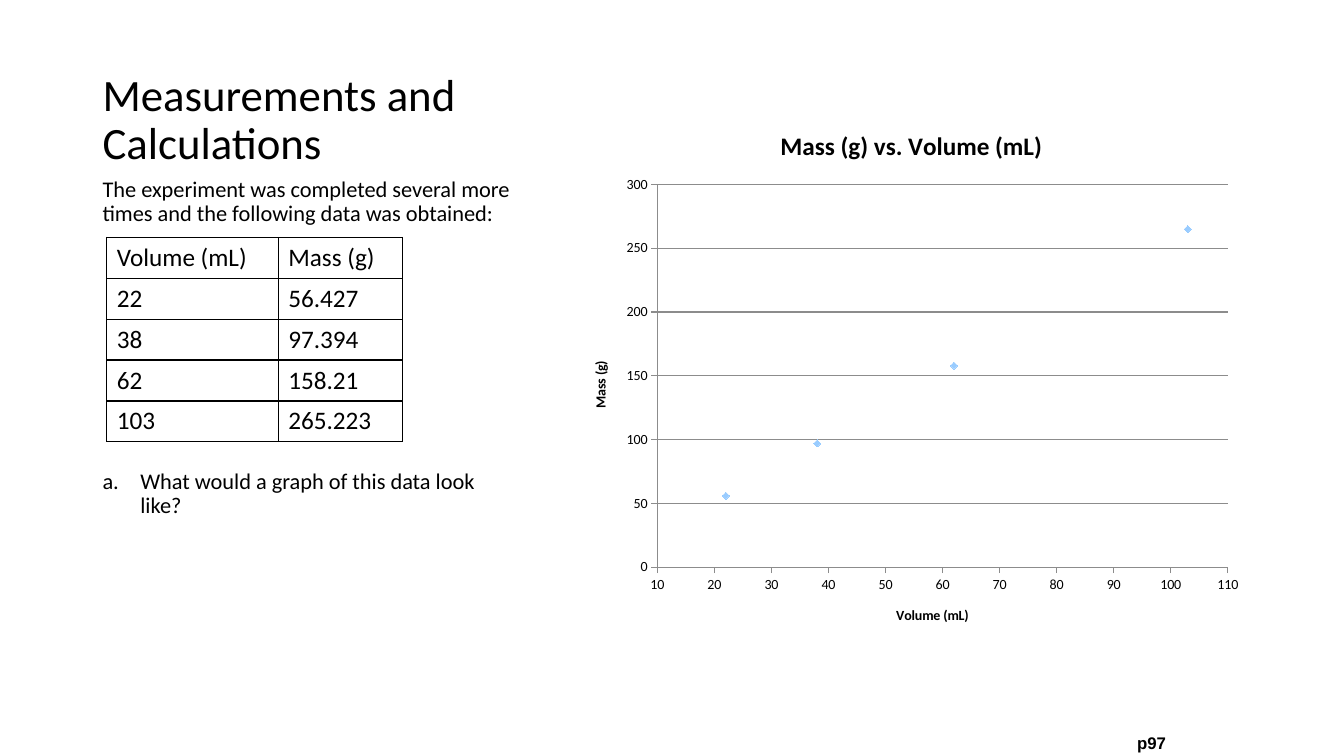
import pptx
import pptx.chart.data
import pptx.dml.color
import pptx.enum.chart
import pptx.enum.text
import pptx.oxml.ns
import pptx.util
from lxml import etree

Pt = pptx.util.Pt
BLACK = pptx.dml.color.RGBColor(0x00, 0x00, 0x00)
GRID_GREY = pptx.dml.color.RGBColor(0x8C, 0x8C, 0x8C)
MARKER_BLUE = pptx.dml.color.RGBColor(0x99, 0xCC, 0xFF)

VOLUME_LABEL, MASS_LABEL = "Volume (mL)", "Mass (g)"
MEASUREMENTS = [(22, 56.427), (38, 97.394), (62, 158.21), (103, 265.223)]


def add_xml(parent, tag, **attributes):
    return etree.SubElement(parent, pptx.oxml.ns.qn(tag), attributes)


def style_font(font, size, name="Calibri", bold=False):
    font.name, font.size, font.bold = name, Pt(size), bold
    font.color.rgb = BLACK


def add_text(slide, box, text, size, spacing=0.9, wrap=True, **font_options):
    """Add a text box at (left, top, width, height) and return it."""
    label = slide.shapes.add_textbox(*map(Pt, box))
    label.text_frame.word_wrap = wrap
    label.text_frame.text = text
    paragraph = label.text_frame.paragraphs[0]
    paragraph.line_spacing = spacing
    style_font(paragraph.runs[0].font, size, **font_options)
    return label


def number_with_letter(paragraph, indent):
    properties = paragraph._p.get_or_add_pPr()
    properties.set("marL", str(Pt(indent)))
    properties.set("indent", str(-Pt(indent)))
    add_xml(properties, "a:buFont", typeface="+mj-lt")
    add_xml(properties, "a:buAutoNum", type="alphaLcPeriod")


def draw_borders(cell):
    properties = cell._tc.get_or_add_tcPr()
    for side in ("a:lnL", "a:lnR", "a:lnT", "a:lnB"):
        border = add_xml(properties, side, w=str(Pt(1)))
        add_xml(add_xml(border, "a:solidFill"), "a:srgbClr", val=str(BLACK))


def add_data_table(slide, left, top, column_widths, row_height):
    rows = [(VOLUME_LABEL, MASS_LABEL)] + MEASUREMENTS
    table = slide.shapes.add_table(
        len(rows), len(column_widths), Pt(left), Pt(top),
        Pt(sum(column_widths)), Pt(row_height * len(rows))).table
    table.first_row = table.horz_banding = False
    for column, width in zip(table.columns, column_widths):
        column.width = Pt(width)
    for row_index, values in enumerate(rows):
        table.rows[row_index].height = Pt(row_height)
        for column_index, value in enumerate(values):
            cell = table.cell(row_index, column_index)
            cell.text = str(value)
            style_font(cell.text_frame.paragraphs[0].runs[0].font, 18)
            draw_borders(cell)
            cell.fill.background()


def set_title(titled, text, size):
    """Title a chart or an axis."""
    frame = (titled.chart_title if hasattr(titled, "chart_title")
             else titled.axis_title).text_frame
    frame.text = text
    style_font(frame.paragraphs[0].runs[0].font, size, bold=True)


def style_axis(axis, title, low, high, step, gridlines):
    axis.minimum_scale, axis.maximum_scale, axis.major_unit = low, high, step
    axis.major_tick_mark = pptx.enum.chart.XL_TICK_MARK.OUTSIDE
    axis.minor_tick_mark = pptx.enum.chart.XL_TICK_MARK.NONE
    axis.format.line.color.rgb = GRID_GREY
    axis.format.line.width = Pt(0.75)
    axis.has_major_gridlines = gridlines
    if gridlines:
        axis.major_gridlines.format.line.color.rgb = GRID_GREY
        axis.major_gridlines.format.line.width = Pt(0.75)
    axis.tick_labels.number_format = "General"
    axis.tick_labels.number_format_is_linked = False
    style_font(axis.tick_labels.font, 10)
    set_title(axis, title, 10)


def place_plot(chart, chart_box, plot_box):
    """Fix the inner plot area; both boxes are given in slide points."""
    chart_left, chart_top, chart_width, chart_height = chart_box
    left, top, width, height = plot_box
    fractions = {"x": (left - chart_left) / chart_width,
                 "y": (top - chart_top) / chart_height,
                 "w": width / chart_width, "h": height / chart_height}
    plot_area = chart._chartSpace.chart.plotArea
    for old_layout in plot_area.findall(pptx.oxml.ns.qn("c:layout")):
        plot_area.remove(old_layout)
    layout = etree.Element(pptx.oxml.ns.qn("c:layout"))
    plot_area.insert(0, layout)
    manual = add_xml(layout, "c:manualLayout")
    add_xml(manual, "c:layoutTarget", val="inner")
    for axis in "xy":
        add_xml(manual, f"c:{axis}Mode", val="edge")
    for name, fraction in fractions.items():
        add_xml(manual, f"c:{name}", val=f"{fraction:.4f}")


def add_scatter(slide, box, plot_box):
    data = pptx.chart.data.XyChartData()
    points = data.add_series("Series 1")
    for volume, mass in MEASUREMENTS:
        points.add_data_point(volume, round(mass))
    chart = slide.shapes.add_chart(
        pptx.enum.chart.XL_CHART_TYPE.XY_SCATTER, *map(Pt, box), data).chart
    style_font(chart.font, 10)
    chart.has_legend = False
    set_title(chart, f"{MASS_LABEL} vs. {VOLUME_LABEL}", 18)
    style_axis(chart.category_axis, VOLUME_LABEL, 10, 110, 10, False)
    style_axis(chart.value_axis, MASS_LABEL, 0, 300, 50, True)
    place_plot(chart, box, plot_box)

    chart.plots[0].vary_by_categories = False
    masses = chart.plots[0].series[0]
    masses.smooth = False
    masses.format.line.fill.background()
    masses.marker.style = pptx.enum.chart.XL_MARKER_STYLE.DIAMOND
    masses.marker.size = 5
    masses.marker.format.fill.solid()
    masses.marker.format.fill.fore_color.rgb = MARKER_BLUE
    masses.marker.format.line.color.rgb = MARKER_BLUE


def main():
    presentation = pptx.Presentation()
    presentation.slide_width, presentation.slide_height = Pt(960), Pt(540)
    slide = presentation.slides.add_slide(presentation.slide_layouts[6])

    # Heading and introduction
    heading = add_text(slide, (66.2, 36, 310, 88.7),
                       "Measurements and Calculations", 32)
    heading.text_frame.vertical_anchor = pptx.enum.text.MSO_ANCHOR.BOTTOM
    add_text(slide, (66.2, 124, 310, 44), "The experiment was completed "
             "several more times and the following data was obtained:", 16)

    # Measured data and the question about it
    add_data_table(slide, 76.3, 169.6, (122.5, 88.5), 29.2)
    question = add_text(slide, (66.2, 332, 310, 44),
                        "What would a graph of this data look like?", 16)
    number_with_letter(question.text_frame.paragraphs[0], 27)

    # Graph
    add_scatter(slide, (408, 77, 486, 384), (469.6, 131.8, 407.5, 273.4))

    # Page reference
    page = add_text(slide, (805, 520, 35, 21.6), "p97", 12, spacing=1.0,
                    wrap=False, name="Arial", bold=True)
    page.text_frame.paragraphs[0].alignment = pptx.enum.text.PP_ALIGN.RIGHT

    presentation.save("out.pptx")


if __name__ == "__main__":
    main()
